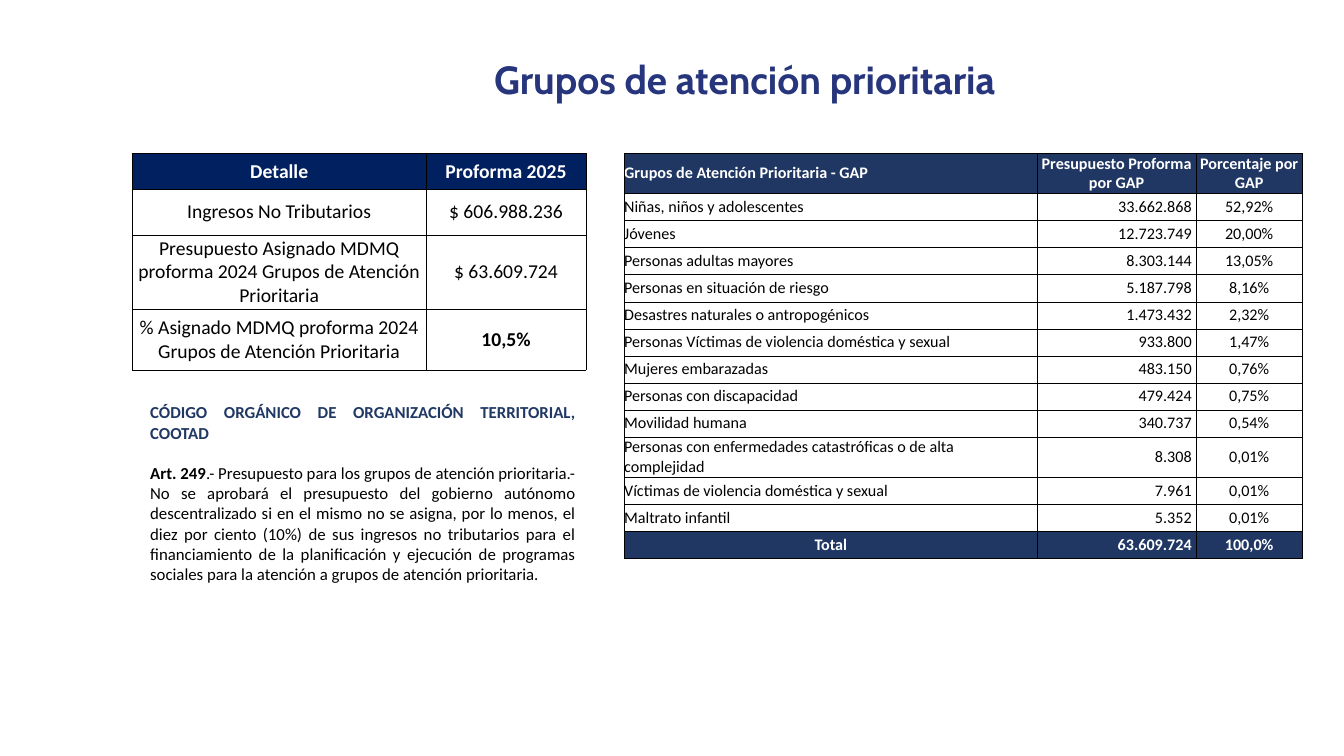
from dataclasses import dataclass
from lxml import etree
from pptx import Presentation
from pptx.dml.color import RGBColor
from pptx.enum.text import MSO_ANCHOR, PP_ALIGN
from pptx.oxml.ns import qn
from pptx.util import Inches, Pt

LEFT, MID, RIGHT, JUST = PP_ALIGN.LEFT, PP_ALIGN.CENTER, PP_ALIGN.RIGHT, PP_ALIGN.JUSTIFY
CENTER = MSO_ANCHOR.MIDDLE

TITLE = "Grupos de atención prioritaria"
INCOME = [
    ("Detalle", "Proforma 2025"),
    ("Ingresos No Tributarios", "$ 606.988.236"),
    ("Presupuesto Asignado MDMQ proforma 2024 Grupos de Atención Prioritaria", "$ 63.609.724"),
    ("% Asignado MDMQ proforma 2024 Grupos de Atención Prioritaria", "10,5%"),
]
GROUPS = [
    ("Grupos de Atención Prioritaria - GAP", "Presupuesto Proforma por GAP", "Porcentaje por GAP"),
    ("Niñas, niños y adolescentes", "33.662.868", "52,92%"),
    ("Jóvenes", "12.723.749", "20,00%"),
    ("Personas adultas mayores", "8.303.144", "13,05%"),
    ("Personas en situación de riesgo", "5.187.798", "8,16%"),
    ("Desastres naturales o antropogénicos", "1.473.432", "2,32%"),
    ("Personas Víctimas de violencia doméstica y sexual", "933.800", "1,47%"),
    ("Mujeres embarazadas", "483.150", "0,76%"),
    ("Personas con discapacidad", "479.424", "0,75%"),
    ("Movilidad humana", "340.737", "0,54%"),
    ("Personas con enfermedades catastróficas o de alta complejidad", "8.308", "0,01%"),
    ("Víctimas de violencia doméstica y sexual", "7.961", "0,01%"),
    ("Maltrato infantil", "5.352", "0,01%"),
    ("Total", "63.609.724", "100,0%"),
]
LAW = "CÓDIGO ORGÁNICO DE ORGANIZACIÓN TERRITORIAL, COOTAD"
ART = "Art. 249"
RULE = (
    ".- Presupuesto para los grupos de atención prioritaria.- No se aprobará el presupuesto "
    "del gobierno autónomo descentralizado si en el mismo no se asigna, por lo menos, el diez "
    "por ciento (10%) de sus ingresos no tributarios para el financiamiento de la planificación "
    "y ejecución de programas sociales para la atención a grupos de atención prioritaria."
)


@dataclass(frozen=True)
class Theme:
    body: str = "Calibri"
    head: str = "Cabin"
    title: str = "27367C"
    navy: str = "002060"
    slate: str = "203764"
    law: str = "203864"
    ink: str = "000000"
    white: str = "FFFFFF"
    big: float = 28
    main: float = 14
    note: float = 12
    small: float = 11.5
    rule: float = 0.25


T = Theme()
TOP, LEFT_X, LEFT_W = 1.52, 1.31, 4.5
RIGHT_X, RIGHT_H = 6.19, 4.02
TALL = 0.4


def style(font, size, color, bold=False, face=T.body):
    font.name, font.size, font.bold = face, Pt(size), bold
    font.color.rgb = RGBColor.from_string(color)


def border(cell):
    props = cell._tc.get_or_add_tcPr()
    for side in ("a:lnL", "a:lnR", "a:lnT", "a:lnB"):
        line = etree.SubElement(props, qn(side), w=str(Pt(T.rule)))
        fill = etree.SubElement(line, qn("a:solidFill"))
        etree.SubElement(fill, qn("a:srgbClr"), val=T.ink)


def grid(slide, data, x, cols, rows, size, dark, bold, align):
    frame = slide.shapes.add_table(len(rows), len(cols), Inches(x), Inches(TOP),
                                   Inches(sum(cols)), Inches(sum(rows)))
    table = frame.table
    table.first_row = table.horz_banding = False
    for col, width in zip(table.columns, cols):
        col.width = Inches(width)
    for row, height in zip(table.rows, rows):
        row.height = Inches(height)
    for r, line in enumerate(data):
        for c, text in enumerate(line):
            cell = table.cell(r, c)
            side = align(r, c)
            border(cell)
            cell.margin_left = cell.margin_top = cell.margin_bottom = 0
            cell.margin_right = Inches(0.04 if side == RIGHT else 0)
            cell.vertical_anchor = CENTER
            if r in dark:
                cell.fill.solid()
                cell.fill.fore_color.rgb = RGBColor.from_string(dark[r])
            else:
                cell.fill.background()
            para = cell.text_frame.paragraphs[0]
            para.text, para.alignment = text, side
            style(para.font, size, T.white if r in dark else T.ink, r in dark or (r, c) in bold)


def box(slide, x, y, w, h):
    frame = slide.shapes.add_textbox(Inches(x), Inches(y), Inches(w), Inches(h)).text_frame
    frame.word_wrap = True
    return frame


def group_side(r, c):
    last = len(GROUPS) - 1
    if c == 0:
        return MID if r == last else LEFT
    return RIGHT if c == 1 and r > 0 else MID


def main():
    deck = Presentation()
    deck.slide_width, deck.slide_height = Inches(13.33), Inches(7.5)
    slide = deck.slides.add_slide(deck.slide_layouts[6])

    grid(slide, INCOME, LEFT_X, [2.92, LEFT_W - 2.92], [0.36, 0.45, 0.74, 0.6],
         T.main, {0: T.navy}, {(3, 1)}, lambda r, c: MID)

    wide = {0, 10}
    short = (RIGHT_H - TALL * len(wide)) / (len(GROUPS) - len(wide))
    rows = [TALL if r in wide else short for r in range(len(GROUPS))]
    grid(slide, GROUPS, RIGHT_X, [4.1, 1.57, 1.06], rows,
         T.small, {0: T.slate, len(GROUPS) - 1: T.slate}, set(), group_side)

    note = box(slide, LEFT_X, 3.94, LEFT_W, 2.12)
    note.margin_left = Inches(0.18)
    law = note.paragraphs[0]
    law.text, law.alignment = LAW, JUST
    style(law.font, T.note, T.law, True)
    art = note.add_paragraph()
    art.alignment, art.space_before = JUST, Pt(14.6)
    style(art.font, T.note, T.ink)
    for text, bold in ((ART, True), (RULE, False)):
        run = art.add_run()
        run.text = text
        style(run.font, T.note, T.ink, bold)

    title = box(slide, 1.62, 0.16, 11.53, 1.31)
    title.vertical_anchor = CENTER
    para = title.paragraphs[0]
    para.text, para.alignment, para.line_spacing = TITLE, MID, 0.9
    style(para.font, T.big, T.title, True, T.head)

    deck.save("out.pptx")


if __name__ == "__main__":
    main()
